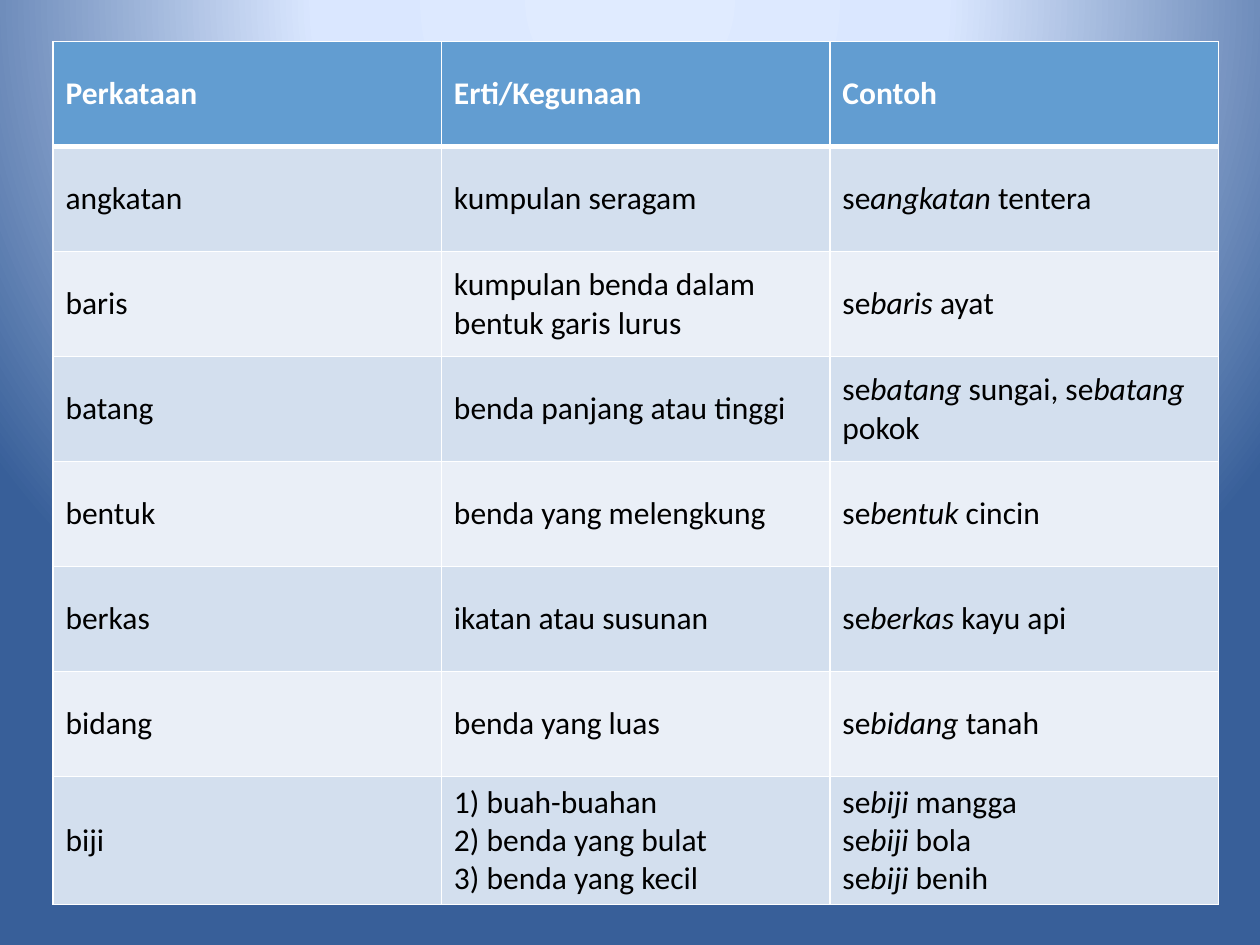
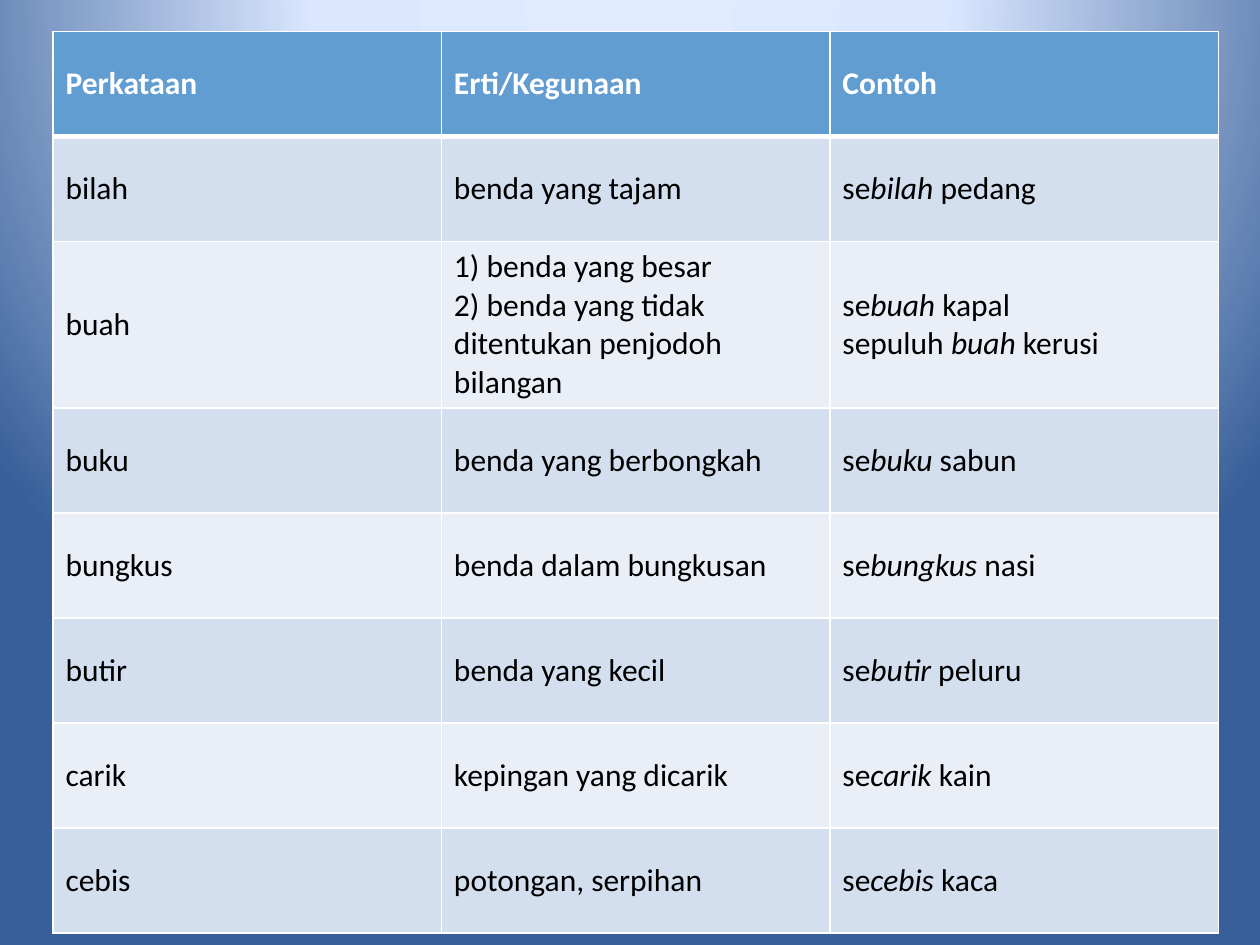
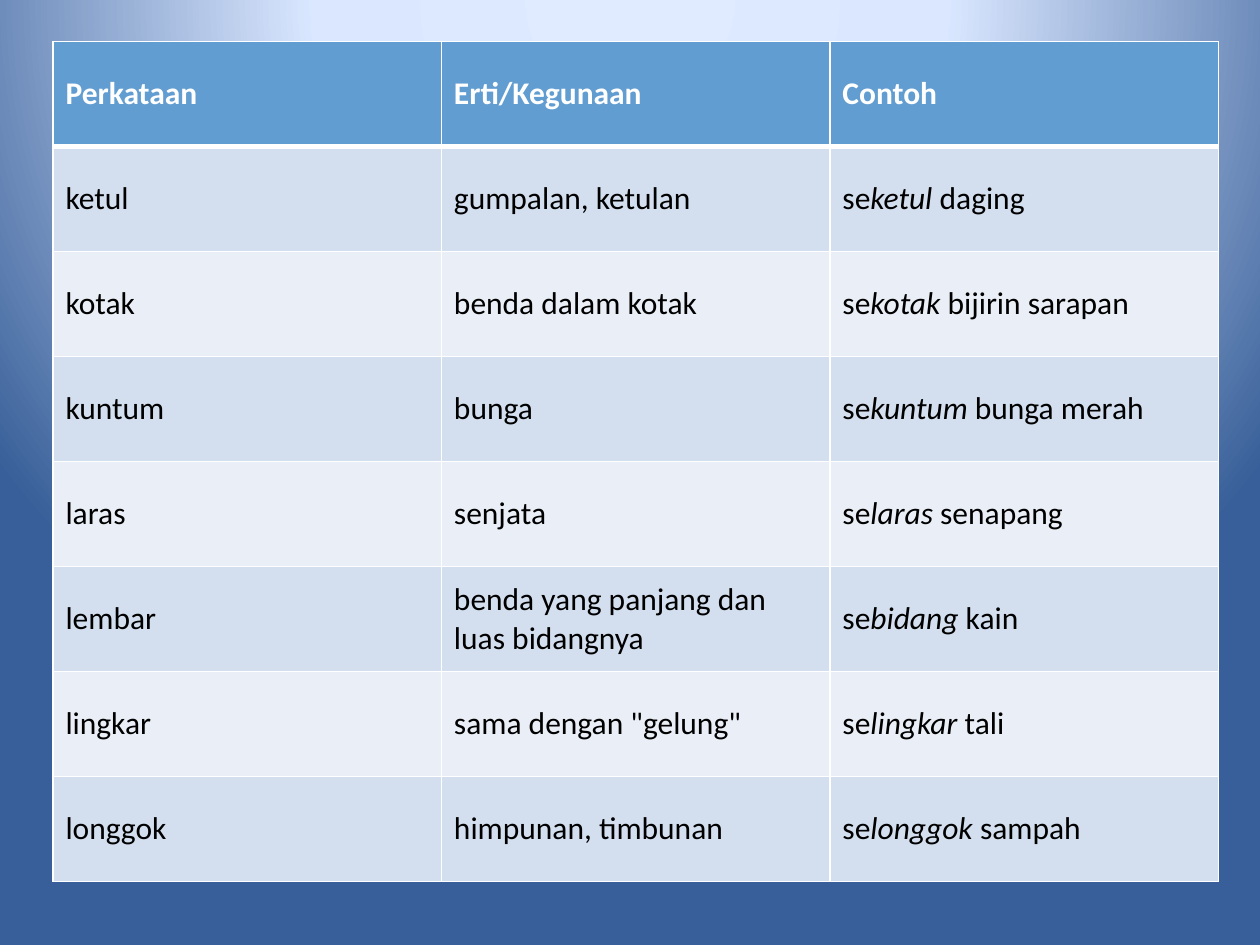
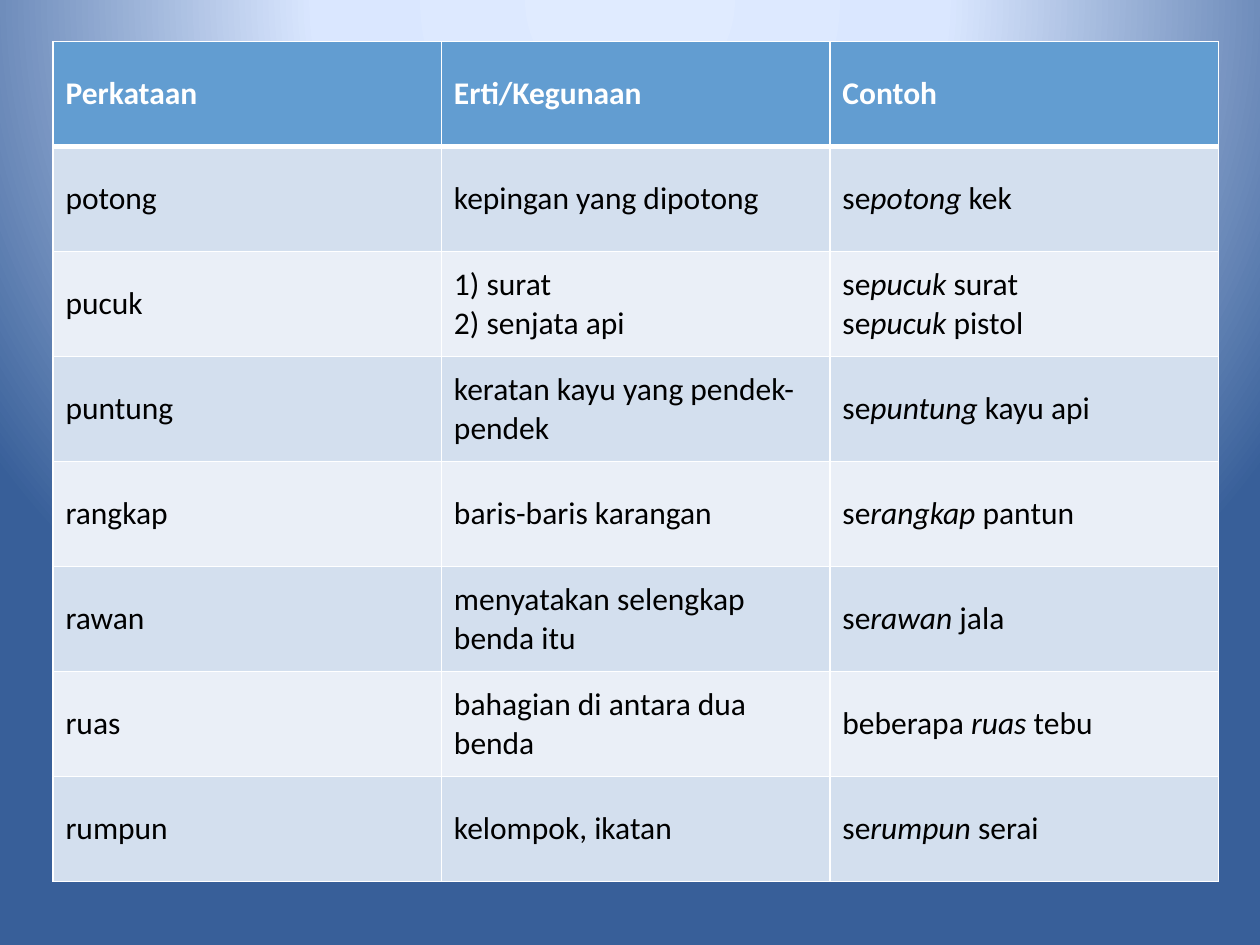
from dataclasses import dataclass

from lxml import etree
from pptx import Presentation
from pptx.dml.color import RGBColor
from pptx.enum.text import MSO_ANCHOR
from pptx.oxml import parse_xml
from pptx.oxml.ns import qn
from pptx.util import Inches, Pt

MIDDLE = MSO_ANCHOR.MIDDLE


@dataclass(frozen=True)
class Theme:
    font: str = "Calibri"
    size: int = 18
    header: str = "629DD1"
    bands: tuple = ("EAEFF7", "D3DFEE")
    white: str = "FFFFFF"
    black: str = "000000"
    gradient: tuple = ((0, "E0EBFF"), (40, "DAE7FF"), (100, "385F99"))
    thin: float = 1
    thick: float = 3


theme = Theme()


def write(tf, text, *, color, bold=False):
    p = tf.paragraphs[0]
    for n, line in enumerate(text.split("\n")):
        if n:
            p.add_line_break()
        for i, part in enumerate(line.split("*")):
            if part:
                r = p.add_run()
                r.text = part
                r.font.name = theme.font
                r.font.size = Pt(theme.size)
                r.font.bold = bold
                r.font.italic = i % 2 == 1
                r.font.color.rgb = RGBColor.from_string(color)


def add_border(cell, side, width):
    ln = etree.SubElement(cell._tc.get_or_add_tcPr(), qn(f"a:ln{side}"), w=str(Pt(width)))
    fill = etree.SubElement(ln, qn("a:solidFill"))
    etree.SubElement(fill, qn("a:srgbClr"), val=theme.white)


HEADER = ("Perkataan", "Erti/Kegunaan", "Contoh")

TABLES = [
    (0.33, [
        ("angkatan", "kumpulan seragam", "se*angkatan* tentera"),
        ("baris", "kumpulan benda dalam bentuk garis lurus", "se*baris* ayat"),
        ("batang", "benda panjang atau tinggi", "se*batang* sungai, se*batang* pokok"),
        ("bentuk", "benda yang melengkung", "se*bentuk* cincin"),
        ("berkas", "ikatan atau susunan", "se*berkas *kayu api"),
        ("bidang", "benda yang luas", "se*bidang *tanah"),
        ("biji", "1) buah-buahan\n2) benda yang bulat\n3) benda yang kecil",
         "se*biji *mangga\nse*biji* bola\nse*biji *benih"),
    ]),
    (0.25, [
        ("bilah", "benda yang tajam", "se*bilah* pedang"),
        ("buah", "1) benda yang besar\n2) benda yang tidak ditentukan penjodoh bilangan",
         "se*buah* kapal\nsepuluh *buah* kerusi"),
        ("buku", "benda yang berbongkah", "se*buku* sabun"),
        ("bungkus", "benda dalam bungkusan", "se*bungkus* nasi"),
        ("butir", "benda yang kecil", "se*butir* peluru"),
        ("carik", "kepingan yang dicarik", "se*carik* kain"),
        ("cebis", "potongan, serpihan", "se*cebis *kaca"),
    ]),
    (0.33, [
        ("ketul", "gumpalan, ketulan", "se*ketul* daging"),
        ("kotak", "benda dalam kotak", "se*kotak* bijirin sarapan"),
        ("kuntum", "bunga", "se*kuntum* bunga merah"),
        ("laras", "senjata", "se*laras* senapang"),
        ("lembar", "benda yang panjang dan luas bidangnya", "se*bidang* kain"),
        ("lingkar", 'sama dengan "gelung"', "se*lingkar* tali"),
        ("longgok", "himpunan, timbunan", "se*longgok *sampah"),
    ]),
    (0.33, [
        ("potong", "kepingan yang dipotong", "se*potong* kek"),
        ("pucuk", "1) surat\n2) senjata api", "se*pucuk* surat\nse*pucuk* pistol"),
        ("puntung", "keratan kayu yang pendek-pendek", "se*puntung* kayu api"),
        ("rangkap", "baris-baris karangan", "se*rangkap* pantun"),
        ("rawan", "menyatakan selengkap benda itu", "se*rawan* jala"),
        ("ruas", "bahagian di antara dua benda", "beberapa *ruas* tebu"),
        ("rumpun", "kelompok, ikatan", "se*rumpun *serai"),
    ]),
]

prs = Presentation()
prs.slide_width = Inches(10)
prs.slide_height = Inches(7.5)

master = prs.slide_master
master.background.fill.solid()
solid = master.element.find(".//" + qn("p:bgPr")).find(qn("a:solidFill"))
stops = "".join(
    f'<a:gs pos="{pos * 1000}"><a:srgbClr val="{color}"/></a:gs>' for pos, color in theme.gradient
)
solid.getparent().replace(solid, parse_xml(
    '<a:gradFill xmlns:a="http://schemas.openxmlformats.org/drawingml/2006/main" rotWithShape="1">'
    f"<a:gsLst>{stops}</a:gsLst>"
    '<a:path path="circle"><a:fillToRect l="50000" t="-80000" r="50000" b="180000"/></a:path>'
    "</a:gradFill>"
))

for top, entries in TABLES:
    s = prs.slides.add_slide(prs.slide_layouts[6])
    rows = [HEADER, *entries]
    table = s.shapes.add_table(
        len(rows), len(HEADER), Inches(0.42), Inches(top), Inches(9.25), Inches(6.67)
    ).table
    for row, texts in enumerate(rows):
        is_header = row == 0
        for col, text in enumerate(texts):
            cell = table.cell(row, col)
            cell.vertical_anchor = MIDDLE
            for side in "LRTB":
                under_header = (row, side) in ((0, "B"), (1, "T"))
                add_border(cell, side, theme.thick if under_header else theme.thin)
            cell.fill.solid()
            cell.fill.fore_color.rgb = RGBColor.from_string(
                theme.header if is_header else theme.bands[row % 2]
            )
            write(cell.text_frame, text, bold=is_header,
                  color=theme.white if is_header else theme.black)

prs.save("out.pptx")
